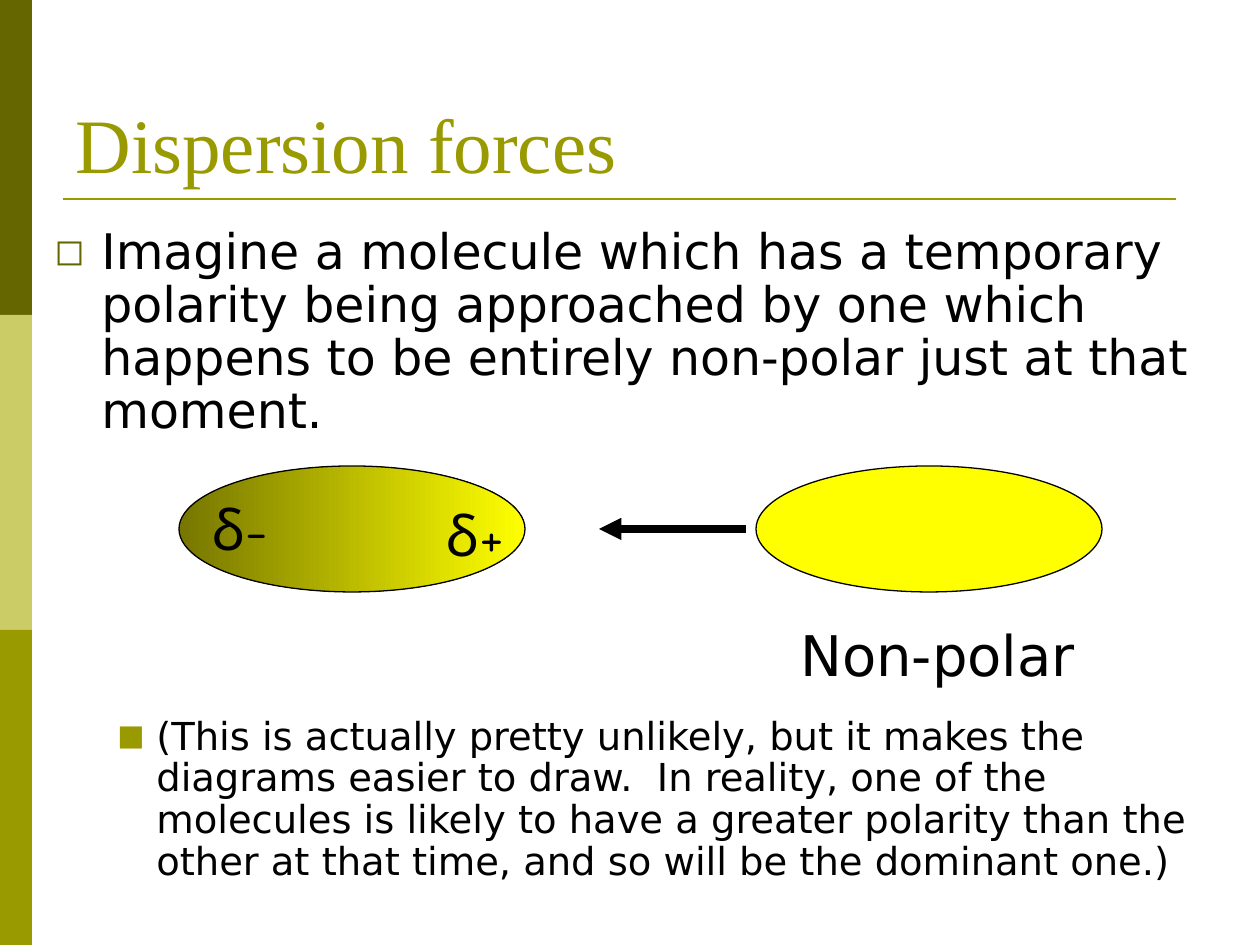
import pptx
import pptx.util
import pptx.dml.color
import pptx.enum.shapes
import pptx.enum.text
import pptx.oxml
import pptx.oxml.ns
import lxml.etree

RGB = pptx.dml.color.RGBColor
OLIVE_DARK = RGB(0x66, 0x66, 0x00)
OLIVE_LIGHT = RGB(0xCC, 0xCC, 0x66)
OLIVE = RGB(0x99, 0x99, 0x00)
SHADE = RGB(0x76, 0x76, 0x00)
YELLOW = RGB(0xFF, 0xFF, 0x00)
BLACK = RGB(0, 0, 0)

PX = 914400 / 126
Pt = pptx.util.Pt
SHAPE = pptx.enum.shapes.MSO_SHAPE
qn = pptx.oxml.ns.qn


def box(*lengths):
    """Turn px lengths into EMU."""
    return [round(length * PX) for length in lengths]


def add_line(start_x, start_y, end_x, end_y, color, width):
    line = slide.shapes.add_connector(
        pptx.enum.shapes.MSO_CONNECTOR.STRAIGHT, *box(start_x, start_y, end_x, end_y))
    line.line.color.rgb = color
    line.line.width = Pt(width)
    lxml.etree.SubElement(line._element.spPr, qn("a:effectLst"))
    return line


deck = pptx.Presentation()
deck.slide_width, deck.slide_height = box(1260, 945)
slide = deck.slides.add_slide(deck.slide_layouts[5])

# Side band and title rule
for row, color in enumerate([OLIVE_DARK, OLIVE_LIGHT, OLIVE]):
    band = slide.shapes.add_shape(SHAPE.RECTANGLE, *box(0, row * 315, 32, 315))
    band.shadow.inherit = False
    band.fill.solid()
    band.fill.fore_color.rgb = color
    band.line.fill.background()
add_line(63, 199, 1176, 199, OLIVE, 1.5)

title = slide.shapes.title
title.left, title.top, title.width, title.height = box(63, 38, 1134, 157)
title.text_frame.text = "Dispersion forces"
title.text_frame.auto_size = pptx.enum.text.MSO_AUTO_SIZE.NONE
title.text_frame.vertical_anchor = pptx.enum.text.MSO_ANCHOR.BOTTOM
heading = title.text_frame.paragraphs[0]
heading.alignment = pptx.enum.text.PP_ALIGN.LEFT
heading.font.name = "Times New Roman"
heading.font.size = Pt(44)
heading.font.color.rgb = OLIVE

# Body: the space before the second point leaves room for the diagram
points = [
    ("Imagine a molecule which has a temporary polarity being approached by one "
     "which happens to be entirely non-polar just at that moment.",
     0, 28, 0, 47, 47, "◻", OLIVE_DARK),
    ("(This is actually pretty unlikely, but it makes the diagrams easier to draw.  "
     "In reality, one of the molecules is likely to have a greater polarity than the "
     "other at that time, and so will be the dominant one.)",
     1, 22, 159, 102, 39, "■", OLIVE),
]
body = slide.shapes.add_textbox(*box(42, 221, 1218, 693)).text_frame
body.word_wrap = True
for text, level, size, gap, margin, hang, bullet, bullet_color in points:
    point = body.add_paragraph() if level else body.paragraphs[0]
    point.text = text
    point.level = level
    props = point._p.get_or_add_pPr()
    props.set("marL", str(round(margin * PX)))
    props.set("indent", str(round(-hang * PX)))
    color_tag = lxml.etree.SubElement(props, qn("a:buClr"))
    lxml.etree.SubElement(color_tag, qn("a:srgbClr"), val=str(bullet_color))
    lxml.etree.SubElement(props, qn("a:buSzPct"), val="75000")
    lxml.etree.SubElement(props, qn("a:buFont"), typeface="DejaVu Sans")
    lxml.etree.SubElement(props, qn("a:buChar"), char=bullet)
    point.line_spacing = 0.9
    point.space_before = Pt(gap)
    point.font.name = "DejaVu Sans"
    point.font.size = Pt(size)
    point.font.color.rgb = BLACK

# Molecules: the left one polarised, the right one not
for left, polar in [(179, True), (756, False)]:
    molecule = slide.shapes.add_shape(SHAPE.OVAL, *box(left, 466, 346, 126))
    molecule.shadow.inherit = False
    if polar:
        molecule.fill.gradient()
        molecule.fill.gradient_angle = 0
        for stop, color, position in zip(molecule.fill.gradient_stops, [SHADE, YELLOW], [0, 1]):
            stop.color.rgb = color
            stop.position = position
    else:
        molecule.fill.solid()
        molecule.fill.fore_color.rgb = YELLOW
    molecule.line.color.rgb = BLACK
    molecule.line.width = Pt(0.75)

approach = add_line(746, 529, 599, 529, BLACK, 4.25)
lxml.etree.SubElement(approach.line._get_or_add_ln(), qn("a:tailEnd"), type="triangle")

for text, left, top, width, font in [
    ("δ-", 199, 488, 84, "Comic Neue"),
    ("δ+", 433, 494, 84, "Comic Neue"),
    ("Non-polar", 788, 614, 305, "DejaVu Sans"),
]:
    label = slide.shapes.add_textbox(*box(left, top, width, 79)).text_frame
    label.word_wrap = True
    label.text = text
    caption = label.paragraphs[0]
    caption.font.name = font
    caption.font.size = Pt(32)
    caption.font.color.rgb = BLACK

deck.save("out.pptx")
